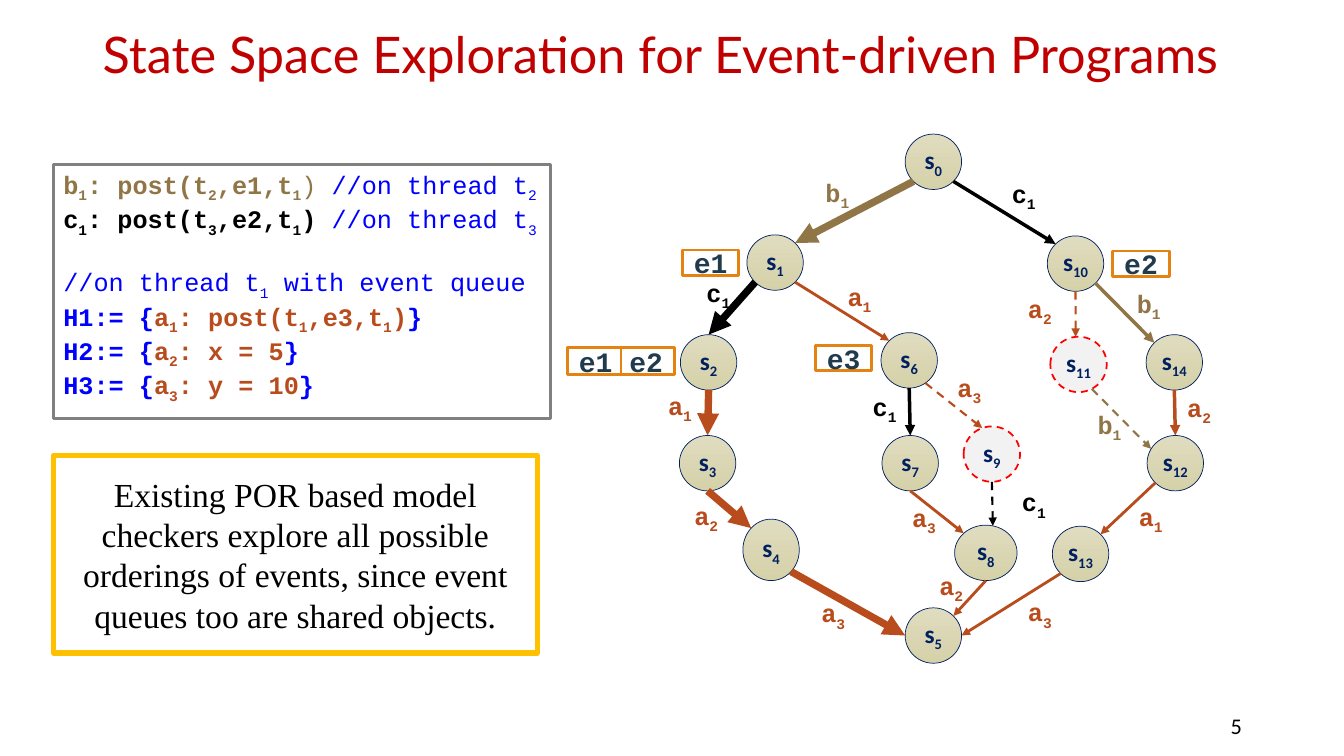
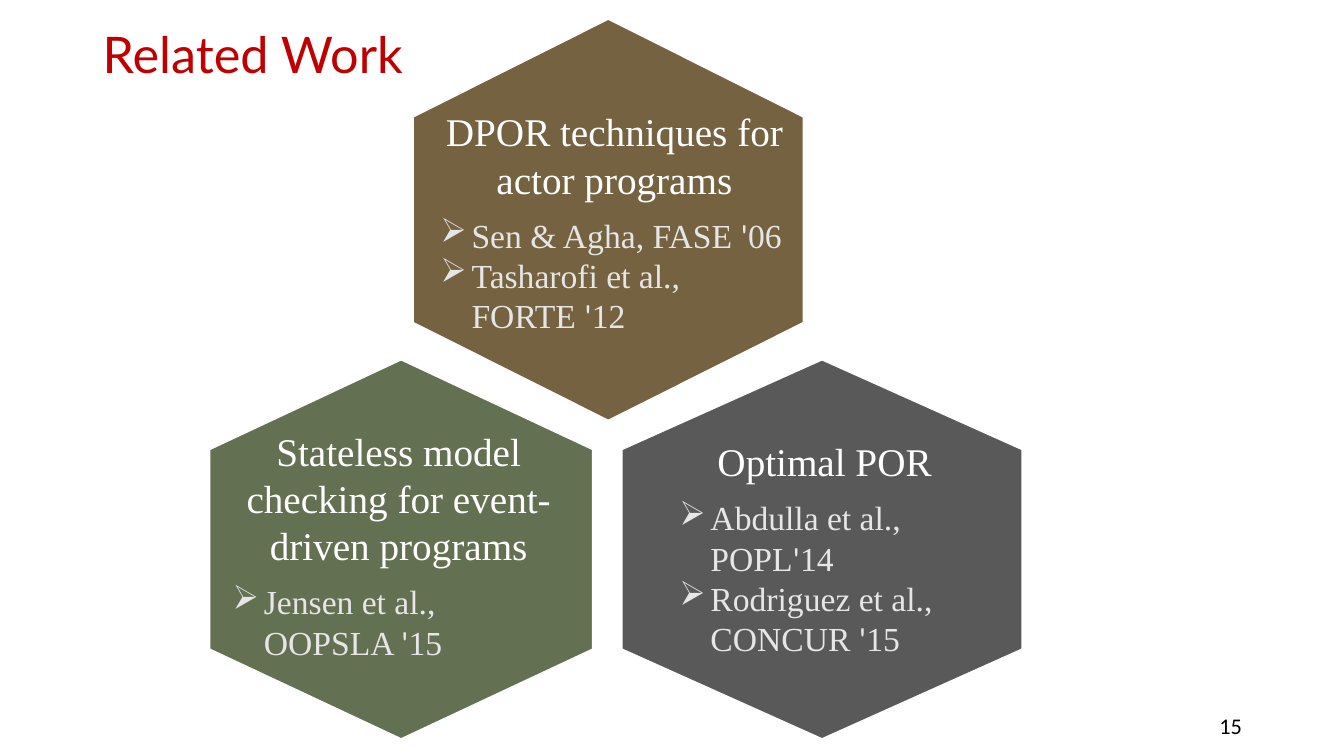
from dataclasses import dataclass
from itertools import takewhile
from math import cos, radians, sin

from lxml import etree
from pptx import Presentation
from pptx.dml.color import RGBColor
from pptx.enum.dml import MSO_LINE
from pptx.enum.shapes import MSO_CONNECTOR, MSO_SHAPE
from pptx.enum.text import MSO_ANCHOR, PP_ALIGN
from pptx.oxml.ns import qn
from pptx.util import Inches, Pt

LEFT, CENTER, RIGHT = PP_ALIGN.LEFT, PP_ALIGN.CENTER, PP_ALIGN.RIGHT
TOP, MIDDLE = MSO_ANCHOR.TOP, MSO_ANCHOR.MIDDLE
RECTANGLE, OVAL = MSO_SHAPE.RECTANGLE, MSO_SHAPE.OVAL
STRAIGHT = MSO_CONNECTOR.STRAIGHT
DASH = MSO_LINE.DASH

# The slide is a grid of square cells, ten to the inch; all places are in cells.
CELL = Inches(0.1)
COLUMNS, ROWS = 133.33, 75
NODE_WIDTH, NODE_HEIGHT = 5.6, 5.5
THICK, MEDIUM, THIN, FINE = 5.25, 2.5, 2, 1.5

COLORS = {
    "title": "C00000", "black": "000000", "white": "FFFFFF",
    "tan": "907647", "rust": "B94C1D", "blue": "0000FF",
    "gray": "808080", "gold": "FFC000", "orange": "E48312",
    "navy": "002060", "slate": "203A4E", "red": "FF0000",
    "sand_light": "E0DCC0", "sand_dark": "D5D1A8", "pale": "F2F2F2",
    "olive": "637052", "brown": "746241", "charcoal": "595959",
    "reference": "E6E6E6",
}
TITLE_FONT, BODY_FONT = "Lato", "Times New Roman"
NODE_FONT, CODE_FONT = "Calibri", "Courier New"


@dataclass(frozen=True)
class Run:
    text: str
    color: str | None = None
    bold: bool | None = None
    font: str | None = None


@dataclass(frozen=True)
class Line:
    runs: tuple[Run, ...]
    space_before: float = 0
    size: float | None = None
    align: PP_ALIGN | None = None
    bullet: bool = False


@dataclass(frozen=True)
class Node:
    number: int
    x: float
    y: float
    width: float = NODE_WIDTH
    height: float = NODE_HEIGHT
    explored_again: bool = False

    def rim(self, angle: float) -> tuple[float, float]:
        """Point on the outline, in degrees clockwise from the right."""
        turn = radians(angle)
        return (self.x + self.width / 2 * (1 + cos(turn)),
                self.y + self.height / 2 * (1 + sin(turn)))


@dataclass(frozen=True)
class Edge:
    source: int
    source_angle: float
    target: int
    target_angle: float
    color: str
    weight: float
    label: str
    label_x: float
    label_y: float
    dashed: bool = False


@dataclass(frozen=True)
class EventBox:
    text: str
    x: float
    y: float
    width: float = 5.6
    height: float = 2.5


@dataclass(frozen=True)
class Hexagon:
    box: tuple[float, float, float, float]
    shoulder: float
    color: str
    text_box: tuple[float, float, float, float]
    heading: str
    references: tuple[str, ...]


def code(*parts: tuple[str, str, bool], space_before: float = 0) -> Line:
    return Line(tuple(Run(*part) for part in parts), space_before)


def handler(number: int, body: str) -> Line:
    return code((f"H{number}:= {{", "blue", True), (f"a_{number}: {body}", "rust", True),
                ("}", "blue", True))


CODE_LINES = (
    code(("b_1: post(t_2,e1,t_1", "tan", True), (") ", "tan", False),
         ("//on thread t_2", "blue", False)),
    code(("c_1: post(t_3,e2,t_1) ", "black", True), ("//on thread t_3", "blue", False)),
    code(("//on thread t_1 with event queue", "blue", False), space_before=20.4),
    handler(1, "post(t_1,e3,t_1)"),
    handler(2, "x = 5"),
    handler(3, "y = 10"),
)
CLAIM = ("Existing POR based model checkers explore all possible orderings of events, "
         "since event queues too are shared objects.")

NODES = {node.number: node for node in (
    Node(0, 89.8, 13.3), Node(1, 74.1, 23.3), Node(2, 67.5, 33.2),
    Node(3, 67.4, 43.2), Node(4, 73.7, 51.5, height=6.1), Node(5, 89.8, 60.3),
    Node(6, 87.4, 33), Node(7, 87.5, 43.2), Node(8, 94.7, 52.1, width=6.2),
    Node(9, 95.6, 42.3, explored_again=True), Node(10, 103.9, 23.4),
    Node(11, 104.2, 33.4, explored_again=True), Node(12, 113.8, 43.2),
    Node(13, 104.4, 52.2), Node(14, 113.7, 33.2),
)}
EDGES = (
    Edge(0, 135, 1, 315, "tan", THICK, "b_1", 80.9, 17.1),
    Edge(1, 135, 2, 270, "black", THICK, "c_1", 69.1, 27),
    Edge(2, 90, 3, 270, "rust", THICK, "a_1", 65.3, 38.2),
    Edge(3, 90, 4, 225, "rust", THICK, "a_2", 67.9, 49.1),
    Edge(4, 45, 5, 180, "rust", THICK, "a_3", 80.5, 58.8),
    Edge(1, 45, 6, 225, "rust", THIN, "a_1", 83.1, 27.4),
    Edge(6, 90, 7, 270, "black", MEDIUM, "c_1", 85.6, 38.3),
    Edge(7, 90, 8, 225, "rust", THIN, "a_3", 89.5, 49.3),
    Edge(8, 90, 5, 315, "rust", THIN, "a_2", 92.2, 56.1),
    Edge(6, 55, 9, 250, "rust", FINE, "a_3", 94, 36.4, True),
    Edge(9, 90, 8, 283, "black", FINE, "c_1", 100.4, 47.8, True),
    Edge(0, 45, 10, 225, "black", MEDIUM, "c_1", 99.4, 17.2),
    Edge(10, 45, 14, 225, "tan", MEDIUM, "b_1", 111.8, 28.1),
    Edge(14, 90, 12, 270, "rust", MEDIUM, "a_2", 116.8, 38.4),
    Edge(10, 90, 11, 264, "rust", FINE, "a_2", 101, 28.6, True),
    Edge(11, 62, 12, 211, "tan", FINE, "b_1", 107.9, 40.1, True),
    Edge(12, 135, 13, 315, "rust", THIN, "a_1", 112, 49.2),
    Edge(13, 135, 5, 0, "rust", THIN, "a_3", 101, 58.7),
)
EVENT_BOXES = (
    EventBox("e1", 67.7, 24.8), EventBox("e2", 110.4, 24.9), EventBox("e3", 80.9, 34.3),
    EventBox("e1 e2", 56.3, 34.5, 10.6, 2.7),
)
HEXAGONS = (
    Hexagon((20.8, 35.7, 38, 37.6), 8.9, "olive", (22.1, 41.9, 34.9, 24.6),
            "Stateless model checking for event-driven programs",
            ("Jensen et al., OOPSLA '15",)),
    Hexagon((41, 1.9, 38.7, 39.8), 9.7, "brown", (42.7, 10.2, 36.5, 23.9),
            "DPOR techniques for actor programs",
            ("Sen & Agha, FASE '06", "Tasharofi et al., FORTE '12")),
    Hexagon((61.7, 35.7, 39.7, 37.6), 8.9, "charcoal", (66.4, 42.9, 30.8, 23.2),
            "Optimal POR",
            ("Abdulla et al., POPL'14", "Rodriguez et al., CONCUR '15")),
)


def cells(*lengths: float) -> list[int]:
    return [round(length * CELL) for length in lengths]


def rgb(name: str) -> RGBColor:
    return RGBColor.from_string(COLORS[name])


def split_subscripts(text: str):
    """Yield (piece, is_subscript); digits after an underscore are lowered."""
    first, *rest = text.split("_")
    yield first, False
    for part in rest:
        digits = "".join(takewhile(str.isdigit, part))
        yield digits, True
        yield part[len(digits):], False


def add_bullet(paragraph) -> None:
    properties = paragraph._p.get_or_add_pPr()
    properties.set("marL", str(Inches(0.31)))
    properties.set("indent", str(-Inches(0.31)))
    etree.SubElement(properties, qn("a:buChar")).set("char", "➢")


def write(shape, content, *, font, size, color="black", bold=False, align=LEFT,
          anchor=TOP, wrap=True, margins=(0.1, 0.05), line_spacing=None) -> None:
    """Fill a shape with a string or a sequence of Lines."""
    lines = (Line((Run(content),)),) if isinstance(content, str) else content
    frame = shape.text_frame
    frame.word_wrap, frame.vertical_anchor = wrap, anchor
    frame.margin_left = frame.margin_right = Inches(margins[0])
    frame.margin_top = frame.margin_bottom = Inches(margins[1])
    for index, line in enumerate(lines):
        paragraph = frame.add_paragraph() if index else frame.paragraphs[0]
        paragraph.alignment = align if line.align is None else line.align
        paragraph.space_before = Pt(line.space_before)
        if line_spacing:
            paragraph.line_spacing = line_spacing
        if line.bullet:
            add_bullet(paragraph)
        for part in line.runs:
            for piece, lowered in split_subscripts(part.text):
                if not piece:
                    continue
                run = paragraph.add_run()
                run.text = piece
                run.font.name = part.font or font
                run.font.size = Pt(line.size or size)
                run.font.bold = bold if part.bold is None else part.bold
                run.font.color.rgb = rgb(part.color or color)
                if lowered:
                    run._r.get_or_add_rPr().set("baseline", "-25000")


def add_text(slide, box, content, **text_format) -> None:
    write(slide.shapes.add_textbox(*cells(*box)), content, **text_format)


def style(shape, fill: str | None, line: str, weight: float) -> None:
    shape.shadow.inherit = False
    if fill:
        shape.fill.solid()
        shape.fill.fore_color.rgb = rgb(fill)
    else:
        shape.fill.background()
    shape.line.color.rgb = rgb(line)
    shape.line.width = Pt(weight)


def add_box(slide, kind, box, fill: str | None, line: str, weight: float):
    shape = slide.shapes.add_shape(kind, *cells(*box))
    style(shape, fill, line, weight)
    return shape


def add_line(slide, start, end, color: str, weight: float, dashed=False, arrow=False):
    connector = slide.shapes.add_connector(STRAIGHT, *cells(*start, *end))
    connector.line.color.rgb = rgb(color)
    connector.line.width = Pt(weight)
    if dashed:
        connector.line.dash_style = DASH
    properties = connector.element.spPr
    if arrow:
        etree.SubElement(properties.find(qn("a:ln")), qn("a:tailEnd")).set("type", "triangle")
    etree.SubElement(properties, qn("a:effectLst"))
    return connector


def add_node(slide, node: Node) -> None:
    box = (node.x, node.y, node.width, node.height)
    if node.explored_again:
        shape = add_box(slide, OVAL, box, "pale", "red", 1.25)
        shape.line.dash_style = DASH
    else:
        shape = add_box(slide, OVAL, box, None, "navy", 0.5)
        shape.fill.gradient()
        shape.fill.gradient_angle = 270
        for stop, color in zip(shape.fill.gradient_stops, ("sand_light", "sand_dark")):
            stop.color.rgb = rgb(color)
    write(shape, f"s_{node.number}", font=NODE_FONT, size=18, color="navy", bold=True,
          align=CENTER, anchor=MIDDLE, wrap=False, margins=(0, 0))


def add_edge(slide, edge: Edge) -> None:
    add_line(slide, NODES[edge.source].rim(edge.source_angle),
             NODES[edge.target].rim(edge.target_angle),
             edge.color, edge.weight, edge.dashed, arrow=True)
    add_text(slide, (edge.label_x, edge.label_y, 5, 4), edge.label, font=CODE_FONT,
             size=18, color=edge.color, bold=True, wrap=False)


def add_event_box(slide, event: EventBox) -> None:
    shape = add_box(slide, RECTANGLE, (event.x, event.y, event.width, event.height),
                    "white", "orange", 2)
    write(shape, event.text, font=CODE_FONT, size=20, color="slate", bold=True,
          align=CENTER, anchor=MIDDLE, margins=(0, 0))
    if " " in event.text:
        middle = event.x + event.width / 2
        divider = add_line(slide, (middle, event.y), (middle, event.y + event.height),
                           "orange", 2)
        divider.begin_connect(shape, 0)
        divider.end_connect(shape, 2)


def add_hexagon(slide, hexagon: Hexagon) -> None:
    x, y, width, height = hexagon.box
    middle, right, bottom = x + width / 2, x + width, y + height
    upper, lower = y + hexagon.shoulder, bottom - hexagon.shoulder
    builder = slide.shapes.build_freeform(*cells(middle, y))
    corners = ((right, upper), (right, lower), (middle, bottom), (x, lower), (x, upper))
    builder.add_line_segments([cells(*corner) for corner in corners], close=True)
    style(builder.convert_to_shape(), hexagon.color, "white", 1)


def add_hexagon_text(slide, hexagon: Hexagon) -> None:
    lines = [Line((Run(hexagon.heading),), size=28, align=CENTER)]
    for index, reference in enumerate(hexagon.references):
        venue, mark, year = reference.partition("'")
        runs = (Run(venue, "reference"), Run(mark, "reference", font=NODE_FONT),
                Run(year, "reference"))
        lines.append(Line(runs, space_before=0 if index else 9, bullet=True))
    add_text(slide, hexagon.text_box, lines, font=BODY_FONT, size=24, color="white")


def add_slide(presentation):
    return presentation.slides.add_slide(presentation.slide_layouts[6])


def add_title_and_number(slide, title: str, number: int) -> None:
    add_text(slide, (9.2, 0.5, 115, 10.4), title, font=TITLE_FONT, size=36,
             color="title", anchor=MIDDLE, line_spacing=0.9)
    add_text(slide, (94.2, 70.6, 30, 2.8), str(number), font=NODE_FONT, size=16,
             align=RIGHT, anchor=MIDDLE)


def build_state_space(presentation) -> None:
    slide = add_slide(presentation)
    add_title_and_number(slide, "State Space Exploration for Event-driven Programs", 5)
    program = add_box(slide, RECTANGLE, (5.3, 16.3, 49.3, 25.2), None, "gray", 2.25)
    write(program, CODE_LINES, font=CODE_FONT, size=18)
    claim = add_box(slide, RECTANGLE, (5.3, 45.2, 48, 19.6), "white", "gold", 3.75)
    write(claim, CLAIM, font=BODY_FONT, size=24, align=CENTER, anchor=MIDDLE)
    for node in NODES.values():
        add_node(slide, node)
    for edge in EDGES:
        add_edge(slide, edge)
    for event in EVENT_BOXES:
        add_event_box(slide, event)


def build_related_work(presentation) -> None:
    slide = add_slide(presentation)
    for hexagon in HEXAGONS:
        add_hexagon(slide, hexagon)
    for hexagon in HEXAGONS:
        add_hexagon_text(slide, hexagon)
    add_title_and_number(slide, "Related Work", 15)


def main() -> None:
    presentation = Presentation()
    presentation.slide_width, presentation.slide_height = cells(COLUMNS, ROWS)
    build_state_space(presentation)
    build_related_work(presentation)
    presentation.save("out.pptx")


if __name__ == "__main__":
    main()
